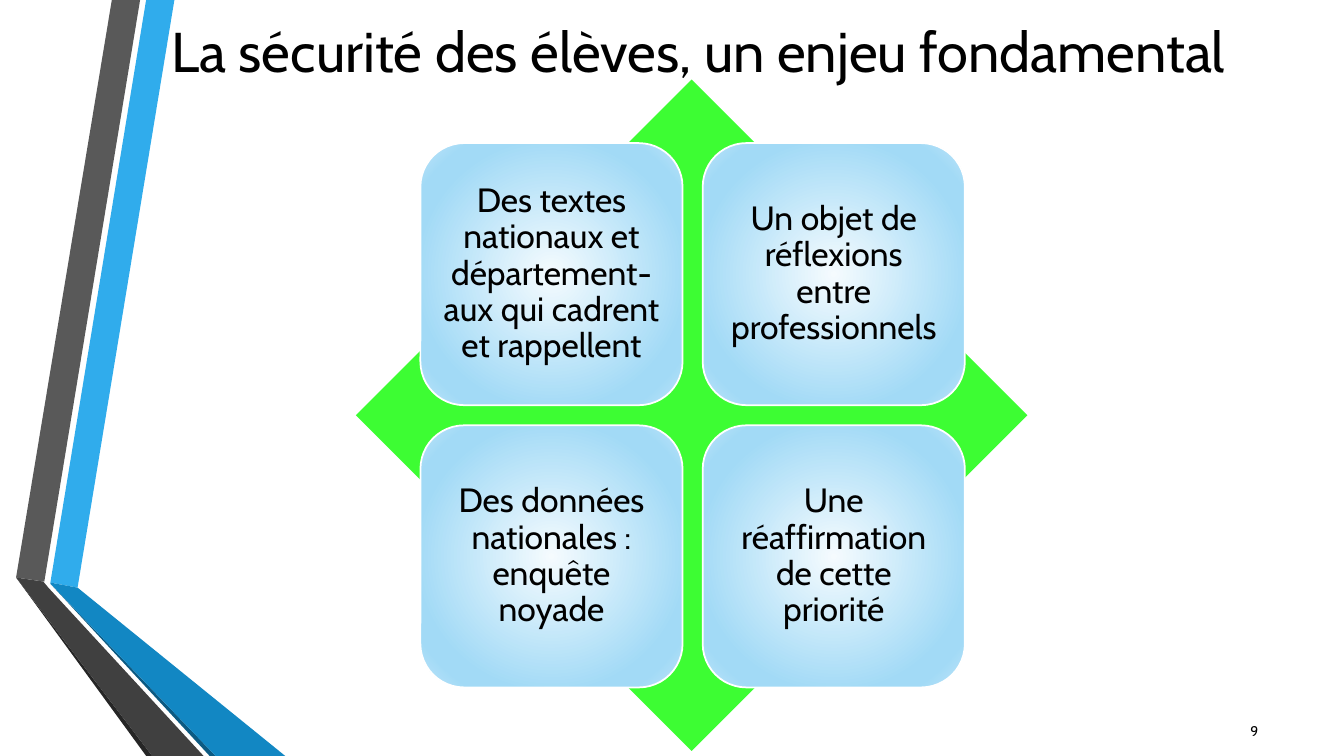
from pptx import Presentation, oxml
from pptx import util as u
from pptx.dml.color import RGBColor
from pptx.enum import shapes, text
from pptx.oxml.ns import nsdecls

INK = "000000"
GLOW_STOPS = [(0, "F5FBFE"), (74, "A2DAF6"), (83, "A2DAF6"), (100, "C1E6F9")]

# Side ribbon: colour and outline of each facet, from back to front
RIBBON = [
    ("30ACEC", [(0.5, 5.78), (0.77, 5.83), (1.73, 0), (1.45, 0)]),
    ("595959", [(1.39, 0), (1.11, 0), (0.16, 5.73), (0.44, 5.77)]),
    ("262626", [(0.16, 5.73), (1.45, 7.5), (1.51, 7.5)]),
    ("0C5A82", [(0.5, 5.79), (2.08, 7.5), (2.14, 7.5)]),
    ("1287C3", [(0.5, 5.79), (2.14, 7.5), (2.83, 7.5), (0.77, 5.83), (0.5, 5.78)]),
    ("404040", [(2.02, 7.5), (0.48, 5.83), (0.43, 5.77), (0.16, 5.73), (1.51, 7.5)]),
]

CARDS = [
    "Des textes nationaux et département-aux qui cadrent et rappellent",
    "Un objet de réflexions entre professionnels",
    "Des données nationales : enquête noyade",
    "Une réaffirmation de cette priorité",
]
CARD_LEFT, CARD_TOP, CARD_SIZE, CARD_STEP = 4.17, 1.42, 2.6, 2.8


def colour(value):
    return RGBColor.from_string(value)


class SlideBuilder:
    font = "Cabin"

    def __init__(self, page):
        self.page = page

    def set_text(self, shape, wording, size, align, inset=0.1):
        frame = shape.text_frame
        frame.text = wording
        frame.word_wrap = True
        frame.auto_size = text.MSO_AUTO_SIZE.NONE
        frame.vertical_anchor = text.MSO_ANCHOR.MIDDLE
        frame.margin_left = frame.margin_right = u.Inches(inset)
        frame.margin_top = frame.margin_bottom = u.Inches(inset)
        para = frame.paragraphs[0]
        para.alignment = align
        para.font.name = self.font
        para.font.size = u.Pt(size)
        para.font.color.rgb = colour(INK)
        return para

    def paint(self, shape, fill):
        shape.shadow.inherit = False
        shape.fill.solid()
        shape.fill.fore_color.rgb = colour(fill)
        shape.line.fill.background()

    def facet(self, fill, points):
        corners = [(u.Inches(x), u.Inches(y)) for x, y in points]
        outline = self.page.shapes.build_freeform(*corners[0])
        outline.add_line_segments(corners[1:], close=True)
        self.paint(outline.convert_to_shape(), fill)

    def title(self, wording, left, top, width, height):
        box = self.page.shapes.title
        box.left, box.top = u.Inches(left), u.Inches(top)
        box.width, box.height = u.Inches(width), u.Inches(height)
        self.set_text(box, wording, 40, text.PP_ALIGN.LEFT)
        # Bring the title in front of the ribbon
        box.element.getparent().append(box.element)

    def label(self, wording, left, top, width, height):
        box = self.page.shapes.add_textbox(
            u.Inches(left), u.Inches(top), u.Inches(width), u.Inches(height))
        self.set_text(box, wording, 10, text.PP_ALIGN.RIGHT)

    def shape(self, kind, left, top, size):
        return self.page.shapes.add_shape(
            kind, u.Inches(left), u.Inches(top), u.Inches(size), u.Inches(size))

    def diamond(self, fill, left, top, size):
        self.paint(self.shape(shapes.MSO_SHAPE.DIAMOND, left, top, size), fill)

    def card(self, wording, left, top, size):
        box = self.shape(shapes.MSO_SHAPE.ROUNDED_RECTANGLE, left, top, size)
        box.shadow.inherit = False
        box.line.color.rgb = colour("FFFFFF")
        box.line.width = u.Pt(1.25)
        self.glow(box)
        para = self.set_text(box, wording, 24, text.PP_ALIGN.CENTER)
        para.line_spacing = 0.9

    def glow(self, shape):
        # Radial gradient, placed right after the geometry
        stops = "".join(
            f'<a:gs pos="{place * 1000}"><a:srgbClr val="{value}"/></a:gs>'
            for place, value in GLOW_STOPS)
        gradient = oxml.parse_xml(
            f'<a:gradFill {nsdecls("a")} rotWithShape="1"><a:gsLst>{stops}</a:gsLst>'
            '<a:path path="circle"><a:fillToRect l="50000" t="50000" r="50000" b="50000"/>'
            '</a:path></a:gradFill>')
        shape.element.spPr.prstGeom.addnext(gradient)


def main():
    deck = Presentation()
    deck.slide_width, deck.slide_height = u.Inches(13.33), u.Inches(7.5)
    builder = SlideBuilder(deck.slides.add_slide(deck.slide_layouts[5]))

    # Side ribbon
    for fill, points in RIBBON:
        builder.facet(fill, points)

    # Title and page number
    builder.title("La sécurité des élèves, un enjeu fondamental", 1.6, 0, 11.36, 1)
    builder.label("9", 11.98, 7.05, 0.6, 0.4)

    # Diamond with a two by two grid of cards
    builder.diamond("3DFD33", 3.53, 0.79, 6.66)
    for index, wording in enumerate(CARDS):
        row, column = divmod(index, 2)
        builder.card(wording, CARD_LEFT + column * CARD_STEP,
                     CARD_TOP + row * CARD_STEP, CARD_SIZE)

    deck.save("out.pptx")


if __name__ == "__main__":
    main()
